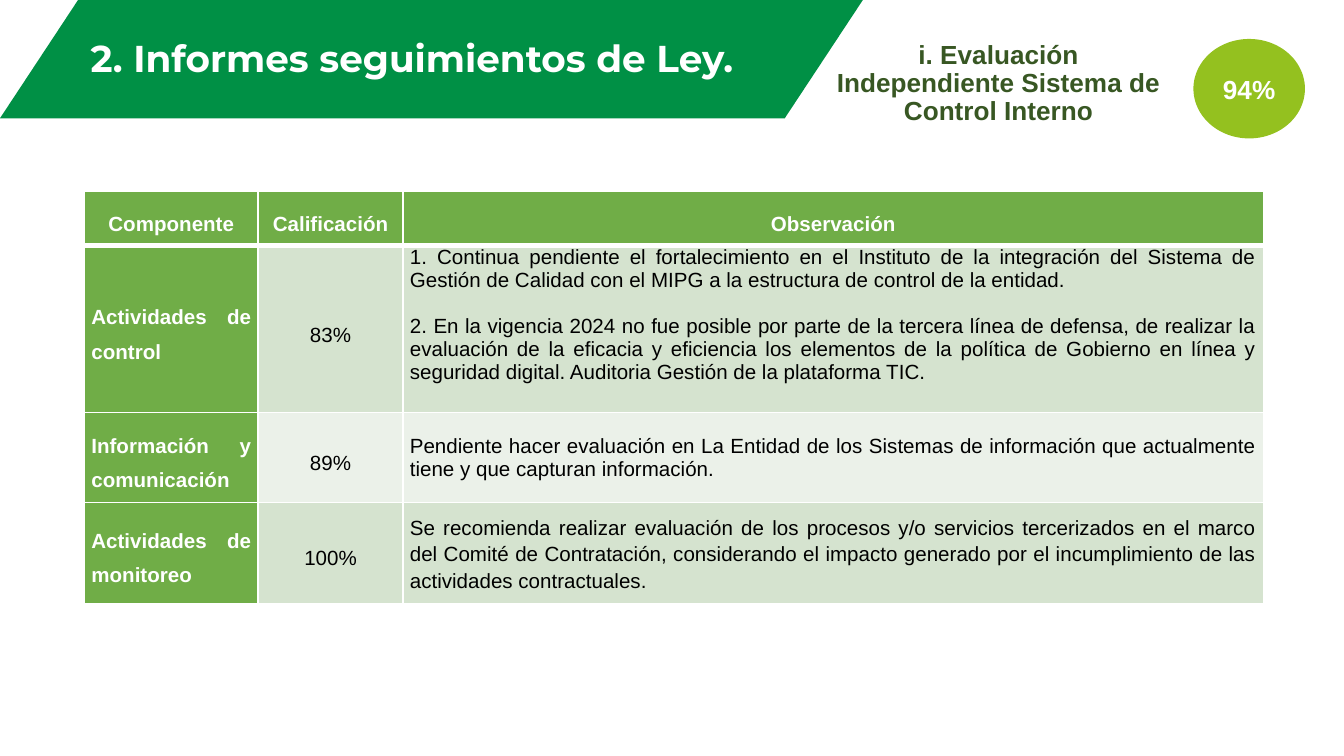
"""Build the slide on legal follow-up reports with its component rating table."""
from lxml import etree
from pptx import Presentation
from pptx.dml.color import RGBColor
from pptx.enum.shapes import MSO_SHAPE
from pptx.enum.text import MSO_ANCHOR, PP_ALIGN
from pptx.oxml.ns import qn
from pptx.util import Inches, Pt

CENTER, JUSTIFY = PP_ALIGN.CENTER, PP_ALIGN.JUSTIFY
TOP, MIDDLE, BOTTOM = MSO_ANCHOR.TOP, MSO_ANCHOR.MIDDLE, MSO_ANCHOR.BOTTOM
PARALLELOGRAM, CIRCLE = MSO_SHAPE.PARALLELOGRAM, MSO_SHAPE.FLOWCHART_CONNECTOR

WHITE, BLACK, DARK_GREEN = "FFFFFF", "000000", "385723"
BANNER_GREEN, LIME, TABLE_GREEN = "009045", "94C11F", "70AD47"
BANDS = ["D5E3CF", "EBF1E9"]

TITLE = "2. Informes seguimientos de Ley. "
SUBTITLE = "i. Evaluación Independiente Sistema de Control Interno"
SCORE = "94%"
HEADERS = ["Componente", "Calificación", "Observación"]
ROWS = [
    ("Actividades de control", "83%", [
        "1. Continua pendiente el fortalecimiento en el Instituto de la integración del "
        "Sistema de Gestión de Calidad con el MIPG a la estructura de control de la entidad.",
        "2. En la vigencia 2024 no fue posible por parte de la tercera línea de defensa, de "
        "realizar la evaluación de la eficacia y eficiencia los elementos de la política de "
        "Gobierno en línea y seguridad digital. Auditoria Gestión de la plataforma TIC. "],
     {"spacing": 1.0, "anchor": TOP}),
    ("Información y comunicación", "89%", [
        "Pendiente hacer evaluación en La Entidad de los Sistemas de información que "
        "actualmente tiene y que capturan información."],
     {"spacing": 1.0}),
    ("Actividades de monitoreo", "100%", [
        "Se recomienda realizar evaluación de los procesos y/o servicios tercerizados en el "
        "marco del Comité de Contratación, considerando el impacto generado por el "
        "incumplimiento de las actividades contractuales."],
     {"spacing": 1.15}),
]
SLIDE_WIDTH = Inches(10)
SLIDE_HEIGHT = SLIDE_WIDTH * 9 // 16
COLUMN_WIDTHS = [1.29, 1.08, 6.4]
ROW_HEIGHTS = [0.41, 1.24, 0.67, 0.75]


def color(value):
    return RGBColor.from_string(value)


def write(frame, texts, fill, size, font="Arial", bold=True, align=CENTER, spacing=1.0):
    frame.word_wrap = True
    for index, text in enumerate(texts):
        paragraph = frame.add_paragraph() if index else frame.paragraphs[0]
        layout = {"alignment": align, "line_spacing": spacing,
                  "space_before": Pt(12.65 if index else 0)}
        for name, value in layout.items():
            setattr(paragraph, name, value)
        run = paragraph.add_run()
        run.text = text
        for name, value in {"name": font, "size": Pt(size), "bold": bold}.items():
            setattr(run.font, name, value)
        run.font.color.rgb = color(fill)


def add_filled_shape(slide, kind, box, fill):
    shape = slide.shapes.add_shape(kind, *map(Inches, box))
    shape.shadow.inherit = False
    shape.fill.solid()
    shape.fill.fore_color.rgb = color(fill)
    shape.line.fill.background()
    return shape


def add_text(slide, box, text, anchor, **style):
    frame = slide.shapes.add_textbox(*map(Inches, box)).text_frame
    frame.vertical_anchor = anchor
    write(frame, [text], spacing=0.9, **style)


def set_borders(cell, row):
    properties = cell._tc.get_or_add_tcPr()
    widths = {"lnL": 1, "lnR": 1, "lnT": 3 if row == 1 else 1, "lnB": 1 if row else 3}
    for side, width in widths.items():
        line = etree.SubElement(properties, qn(f"a:{side}"), w=str(Pt(width)))
        fill = etree.SubElement(line, qn("a:solidFill"))
        etree.SubElement(fill, qn("a:srgbClr"), val=WHITE)


def fill_cell(table, row, column, texts, background, anchor=MIDDLE, **style):
    cell = table.cell(row, column)
    margins = {"margin_left": 0.05, "margin_right": 0.05, "margin_top": 0, "margin_bottom": 0}
    for name, value in margins.items():
        setattr(cell, name, Inches(value))
    cell.vertical_anchor = anchor
    set_borders(cell, row)
    cell.fill.solid()
    cell.fill.fore_color.rgb = color(background)
    write(cell.text_frame, texts, size=11, **{"spacing": 1.5, **style})


def add_ratings_table(slide):
    box = (0.63, 1.42, sum(COLUMN_WIDTHS), sum(ROW_HEIGHTS))
    table = slide.shapes.add_table(
        len(ROW_HEIGHTS), len(COLUMN_WIDTHS), *map(Inches, box)).table
    for column, width in zip(table.columns, COLUMN_WIDTHS):
        column.width = Inches(width)
    for row, height in zip(table.rows, ROW_HEIGHTS):
        row.height = Inches(height)
    for column, header in enumerate(HEADERS):
        fill_cell(table, 0, column, [header], TABLE_GREEN, fill=WHITE)
    for row, (component, rating, remarks, style) in enumerate(ROWS, 1):
        band = BANDS[(row - 1) % 2]
        fill_cell(table, row, 0, [component], TABLE_GREEN, fill=WHITE, align=JUSTIFY)
        fill_cell(table, row, 1, [rating], band, fill=BLACK, bold=False)
        fill_cell(table, row, 2, remarks, band, fill=BLACK, bold=False, align=JUSTIFY, **style)


def main():
    presentation = Presentation()
    presentation.slide_width, presentation.slide_height = SLIDE_WIDTH, SLIDE_HEIGHT
    slide = presentation.slides.add_slide(presentation.slide_layouts[6])
    banner = add_filled_shape(slide, PARALLELOGRAM, (0, 0, 6.42, 0.88), BANNER_GREEN)
    banner.adjustments[0] = 0.66
    add_text(slide, (0.41, 0.22, 5.39, 0.43), TITLE, BOTTOM,
             fill=WHITE, size=20, font="Montserrat")
    add_ratings_table(slide)
    add_text(slide, (6.1, 0.26, 2.66, 0.74), SUBTITLE, TOP, fill=DARK_GREEN, size=14)
    badge = add_filled_shape(slide, CIRCLE, (8.88, 0.29, 0.83, 0.74), LIME)
    badge.text_frame.vertical_anchor = MIDDLE
    write(badge.text_frame, [SCORE], WHITE, 14)
    presentation.save("out.pptx")


if __name__ == "__main__":
    main()
